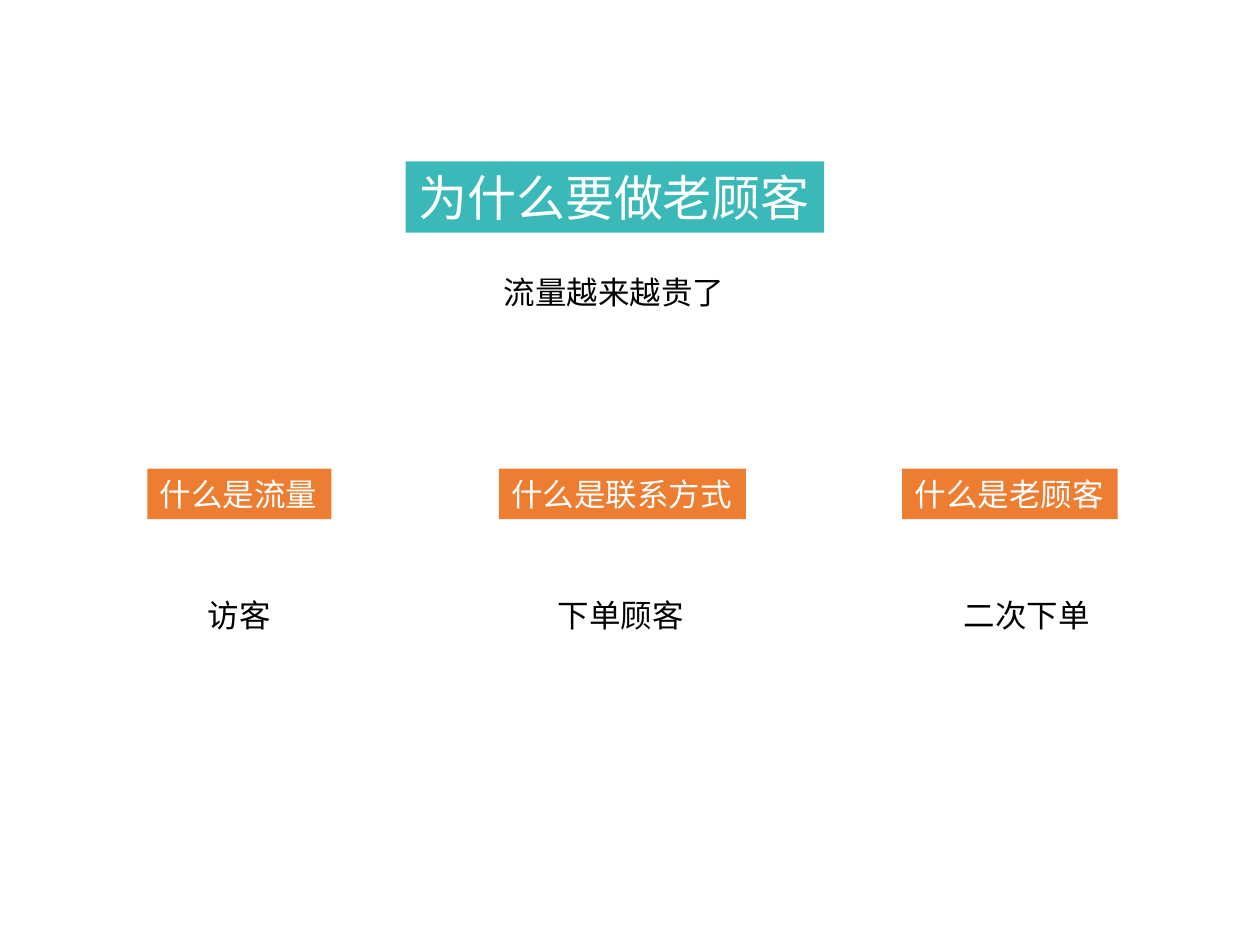
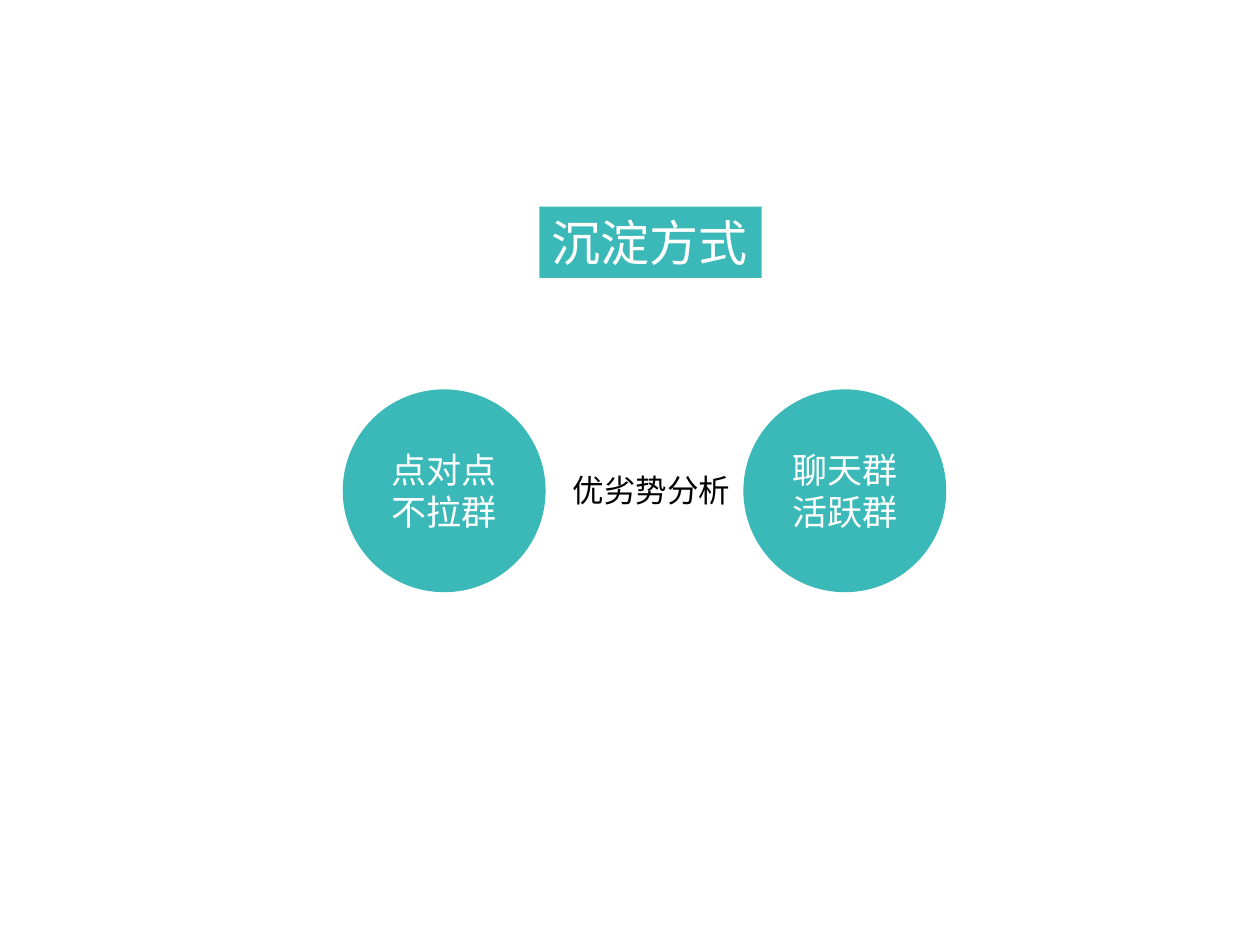
"""Build two slides on why and how to keep returning customers."""
import pptx
import pptx.util
import pptx.dml.color
import pptx.enum.shapes
import pptx.enum.text

Shape = pptx.enum.shapes.MSO_SHAPE
Align = pptx.enum.text.PP_ALIGN
Anchor = pptx.enum.text.MSO_ANCHOR
Fit = pptx.enum.text.MSO_AUTO_SIZE

TEAL, ORANGE, WHITE, BLACK = "3BB9B8", "ED7D31", "FFFFFF", "000000"


def color(code):
    return pptx.dml.color.RGBColor.from_string(code)


class Deck:
    font = "Cambria"
    big, mid, small = 28, 20, 18
    cols, rows = 100, 75

    def __init__(self):
        self.prs = pptx.Presentation()
        self.prs.slide_width = pptx.util.Inches(10)
        self.prs.slide_height = pptx.util.Inches(7.5)
        self.slide = None

    def grid(self, x, y, w, h):
        col = self.prs.slide_width / self.cols
        row = self.prs.slide_height / self.rows
        return [round(n * unit) for n, unit in zip((x, y, w, h), (col, row) * 2)]

    def frame(self, text, x, y, size):
        width = len(text) * size / 7.2 + 2.1
        return self.grid(x, y, width, size / 6 + 1)

    def letter(self, shape, lines, size, ink, align=Align.LEFT, anchor=Anchor.TOP, wrap=False):
        body = shape.text_frame
        body.text = "\n".join(lines)
        body.word_wrap = wrap
        body.auto_size = Fit.NONE
        body.vertical_anchor = anchor
        for para in body.paragraphs:
            para.alignment = align
            para.font.name = self.font
            para.font.size = pptx.util.Pt(size)
            para.font.color.rgb = color(ink)

    def paint(self, shape, fill):
        shape.fill.solid()
        shape.fill.fore_color.rgb = color(fill)

    def shape(self, kind, box, fill):
        item = self.slide.shapes.add_shape(kind, *box)
        item.shadow.inherit = False
        item.line.fill.background()
        self.paint(item, fill)
        return item

    def title(self, text, x, y):
        self.slide = self.prs.slides.add_slide(self.prs.slide_layouts[5])
        item = self.slide.shapes.title
        item.left, item.top, item.width, item.height = self.frame(text, x, y, self.big)
        self.paint(item, TEAL)
        self.letter(item, [text], self.big, WHITE)

    def label(self, text, x, y, align=Align.LEFT):
        item = self.slide.shapes.add_textbox(*self.frame(text, x, y, self.small))
        self.letter(item, [text], self.small, BLACK, align)

    def tag(self, text, x, y):
        item = self.shape(Shape.RECTANGLE, self.frame(text, x, y, self.small), ORANGE)
        self.letter(item, [text], self.small, WHITE)

    def disc(self, lines, x, y, size):
        item = self.shape(Shape.OVAL, self.grid(x, y, size, size), TEAL)
        self.letter(item, lines, self.mid, WHITE, Align.CENTER, Anchor.MIDDLE, True)


def main():
    deck = Deck()

    deck.title("为什么要做老顾客", 32.2, 12.8)
    deck.label("流量越来越贵了", 39, 21.2)
    terms = [
        ("什么是流量", 11.7, "访客", 15.5),
        ("什么是联系方式", 39.6, "下单顾客", 43.3),
        ("什么是老顾客", 71.6, "二次下单", 75.5),
    ]
    for term, left, reply, inset in terms:
        deck.tag(term, left, 37.2)
        deck.label(reply, inset, 46.8)

    deck.title("沉淀方式", 42.8, 16.4)
    deck.label("优劣势分析", 44.4, 36.9, Align.CENTER)
    groups = [("点对点", "不拉群"), ("聊天群", "活跃群")]
    for i, lines in enumerate(groups):
        deck.disc(lines, 27.2 + 31.8 * i, 30.9, 16.1)

    deck.prs.save("out.pptx")


if __name__ == "__main__":
    main()
